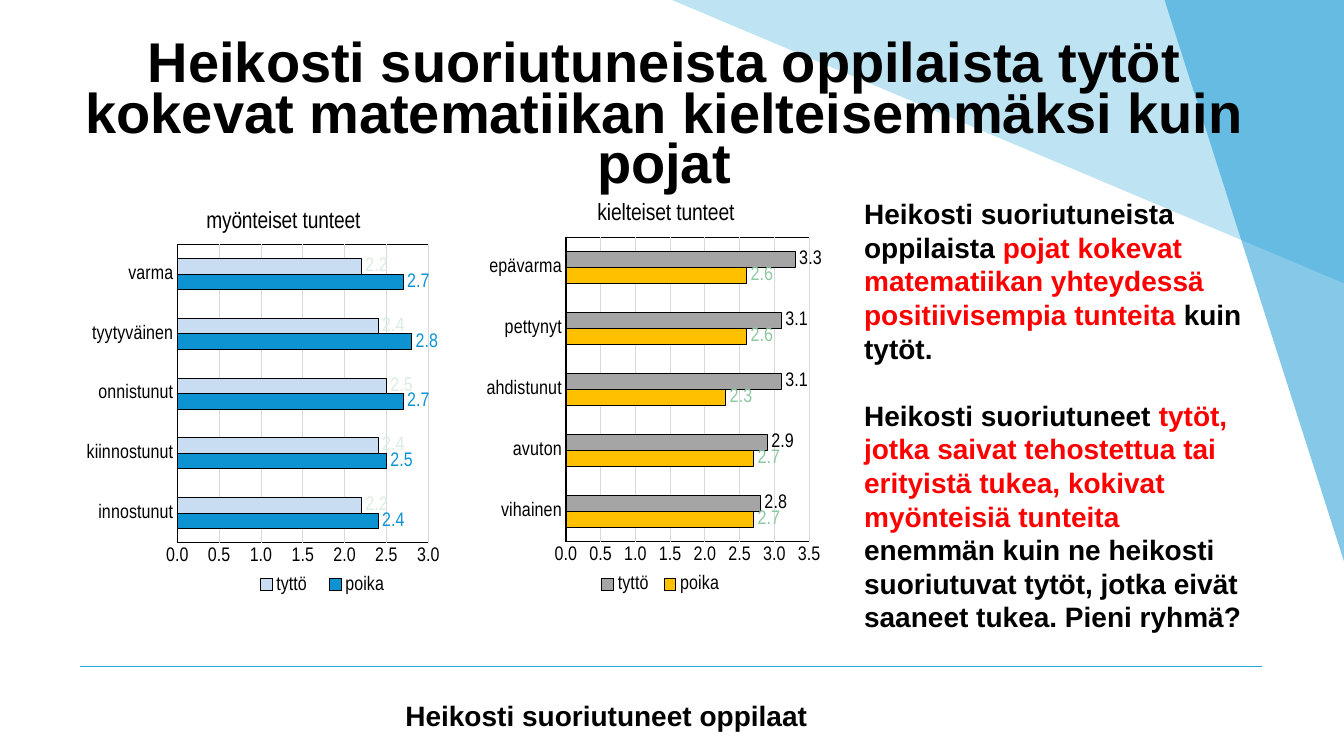
from lxml import etree
from pptx import Presentation
from pptx.chart.data import CategoryChartData
from pptx.dml.color import RGBColor
from pptx.enum.chart import XL_CHART_TYPE, XL_LABEL_POSITION, XL_LEGEND_POSITION, XL_TICK_MARK
from pptx.enum.shapes import MSO_CONNECTOR
from pptx.enum.text import MSO_ANCHOR, MSO_AUTO_SIZE, PP_ALIGN
from pptx.oxml import parse_xml
from pptx.oxml.ns import nsdecls, qn
from pptx.util import Inches, Pt

BAR = XL_CHART_TYPE.BAR_CLUSTERED
OUTSIDE = XL_LABEL_POSITION.OUTSIDE_END
BOTTOM = XL_LEGEND_POSITION.BOTTOM
NO_TICK = XL_TICK_MARK.NONE
STRAIGHT = MSO_CONNECTOR.STRAIGHT
TOP = MSO_ANCHOR.TOP
FIXED = MSO_AUTO_SIZE.NONE
CENTER = PP_ALIGN.CENTER

WIDTH, HEIGHT = 13.33, 7.5
BLACK, RED, BLUE, SKY = "000000", "FF0000", "0D93D2", "28A7DA"

TITLE = "Heikosti suoriutuneista oppilaista tytöt kokevat matematiikan kielteisemmäksi kuin pojat"
FINDINGS = [
    [("Heikosti suoriutuneista oppilaista ", BLACK),
     ("pojat kokevat matematiikan yhteydessä positiivisempia tunteita ", RED),
     ("kuin tytöt.", BLACK)],
    [("Heikosti suoriutuneet ", BLACK),
     ("tytöt, jotka saivat tehostettua tai erityistä tukea, kokivat myönteisiä tunteita ", RED),
     ("enemmän kuin ne heikosti suoriutuvat tytöt, jotka eivät saaneet tukea. Pieni ryhmä?", BLACK)],
]
POSITIVE = {
    "title": "myönteiset tunteet", "maximum": 3,
    "legend": (0.44, 0.44), "plot": (0.25, 0.71),
    "categories": ["innostunut", "kiinnostunut", "onnistunut", "tyytyväinen", "varma"],
    "series": [("poika", [2.4, 2.5, 2.7, 2.8, 2.7], BLUE, BLUE),
               ("tyttö", [2.2, 2.4, 2.5, 2.4, 2.2], "C8DDF1", "DBEEE1")],
}
NEGATIVE = {
    "title": "kielteiset tunteet", "maximum": 3.5,
    "legend": (0.32, 0.4), "plot": (0.24, 0.72),
    "categories": ["vihainen", "avuton", "ahdistunut", "pettynyt", "epävarma"],
    "series": [("poika", [2.7, 2.7, 2.3, 2.6, 2.6], "FFC000", "8DC9A0"),
               ("tyttö", [2.8, 2.9, 3.1, 3.1, 3.3], "A5A5A5", BLACK)],
}


def color(value):
    """Turn a hex string into a colour."""
    return RGBColor.from_string(value)


def style_font(font, size, name, value, bold=False):
    """Set size, typeface, colour and weight."""
    font.size, font.name, font.bold = Pt(size), name, bold
    font.color.rgb = color(value)


def style_line(line, value):
    """Give an outline a thin solid colour."""
    line.color.rgb = color(value)
    line.width = Pt(0.75)


def prepare_frame(frame):
    """Wrap text in a frame without margins."""
    frame.word_wrap = True
    frame.auto_size = FIXED
    frame.vertical_anchor = TOP
    frame.margin_left = frame.margin_right = frame.margin_top = frame.margin_bottom = 0


def add_spans(para, spans, size):
    """Add bold coloured runs to a paragraph."""
    for text, value in spans:
        span = para.add_run()
        span.text = text
        style_font(span.font, size, "Arial", value, True)


def add_facet(page, points, value, opacity):
    """Draw a translucent triangle."""
    builder = page.shapes.build_freeform(Inches(points[0][0]), Inches(points[0][1]), scale=1.0)
    builder.add_line_segments([(Inches(x), Inches(y)) for x, y in points[1:]], close=True)
    facet = builder.convert_to_shape()
    facet.shadow.inherit = False
    facet.fill.solid()
    facet.fill.fore_color.rgb = color(value)
    facet.line.fill.background()
    tint = facet.fill._xPr.find(".//" + qn("a:srgbClr"))
    etree.SubElement(tint, qn("a:alpha")).set("val", str(opacity * 1000))


def add_backdrop(page):
    """Draw the corner facets and the rule above the footer."""
    add_facet(page, [(WIDTH / 2, 0), (WIDTH, 2.81), (WIDTH, 0)], SKY, 30)
    add_facet(page, [(11.55, 0), (WIDTH, 5.57), (WIDTH, 0)], BLUE, 50)
    rule = page.shapes.add_connector(STRAIGHT, *map(Inches, (0.79, 6.61, 12.52, 6.61)))
    rule.line.color.rgb = color(SKY)
    rule.line.width = Pt(1)
    etree.SubElement(rule._element.spPr, qn("a:effectLst"))


def add_title(page, box):
    """Place the headline placeholder in front of the backdrop."""
    title = page.shapes.title
    page.shapes._spTree.append(title._element)
    title.left, title.top, title.width, title.height = map(Inches, box)
    prepare_frame(title.text_frame)
    para = title.text_frame.paragraphs[0]
    para.alignment = CENTER
    para.line_spacing = 0.75
    add_spans(para, [(TITLE, BLACK)], 40)


def add_text(page, box, paragraphs):
    """Place bold body paragraphs one line apart."""
    frame = page.shapes.add_textbox(*map(Inches, box)).text_frame
    prepare_frame(frame)
    for index, spans in enumerate(paragraphs):
        para = frame.add_paragraph() if index else frame.paragraphs[0]
        if index:
            para.space_before = Pt(24)
        add_spans(para, spans, 20)


def set_layout(element, shares, inner=False):
    """Fix a chart part at shares of the chart's size."""
    for old in element.findall(qn("c:layout")):
        element.remove(old)
    target = '<c:layoutTarget val="inner"/>' if inner else ""
    modes = "".join(f'<c:{axis}Mode val="edge"/>' for axis in "xy")
    places = "".join(f'<c:{key} val="{share}"/>' for key, share in zip("xywh", shares))
    layout = parse_xml(f'<c:layout {nsdecls("c")}><c:manualLayout>{target}{modes}{places}'
                       '</c:manualLayout></c:layout>')
    before = element.find(qn("c:tx"))
    if before is None:
        before = element.find(qn("c:legendPos"))
    if before is None:
        element.insert(0, layout)
    else:
        before.addnext(layout)


def style_axes(chart, maximum):
    """Format the category and value axes."""
    for axis in (chart.category_axis, chart.value_axis):
        axis.major_tick_mark = axis.minor_tick_mark = NO_TICK
        style_font(axis.tick_labels.font, 14, "Arial Narrow", BLACK)
    style_line(chart.category_axis.format.line, BLACK)
    scale = chart.value_axis
    scale.minimum_scale, scale.maximum_scale, scale.major_unit = 0, maximum, 0.5
    scale.tick_labels.number_format = "0.0"
    scale.tick_labels.number_format_is_linked = False
    scale.format.line.fill.background()
    style_line(scale.major_gridlines.format.line, "D9D9D9")


def add_feelings_chart(page, box, feelings):
    """Place a bar chart comparing girls and boys."""
    data = CategoryChartData(number_format="0.0")
    data.categories = feelings["categories"]
    for name, values, _, _ in feelings["series"]:
        data.add_series(name, values)
    chart = page.shapes.add_chart(BAR, *map(Inches, box), data).chart
    style_font(chart.font, 14, "Arial Narrow", BLACK)
    style_axes(chart, feelings["maximum"])
    plot = chart.plots[0]
    plot.gap_width, plot.overlap, plot.vary_by_categories = 182, 0, False
    for series, (_, _, fill, label) in zip(plot.series, feelings["series"]):
        series.format.fill.solid()
        series.format.fill.fore_color.rgb = color(fill)
        style_line(series.format.line, BLACK)
        labels = series.data_labels
        labels.show_value, labels.position = True, OUTSIDE
        labels.number_format, labels.number_format_is_linked = "0.0", False
        style_font(labels.font, 14, "Arial Narrow", label)
    span = chart.chart_title.text_frame.paragraphs[0].add_run()
    span.text = feelings["title"]
    style_font(span.font, 16.8, "Arial Narrow", BLACK)
    chart.chart_title.include_in_layout = False
    set_layout(chart.chart_title._element, (0.32, 0))
    chart.has_legend = True
    chart.legend.position, chart.legend.include_in_layout = BOTTOM, False
    style_font(chart.legend.font, 14, "Arial Narrow", BLACK)
    left, width = feelings["legend"]
    set_layout(chart.legend._element, (left, 0.92, width, 0.07))
    area = chart._chartSpace.chart.plotArea
    left, width = feelings["plot"]
    set_layout(area, (left, 0.1, width, 0.75), True)
    area.append(parse_xml(f'<c:spPr {nsdecls("c", "a")}><a:noFill/><a:ln w="9525"><a:solidFill>'
                          f'<a:srgbClr val="{BLACK}"/></a:solidFill></a:ln></c:spPr>'))


def main():
    """Build the slide and save the deck."""
    deck = Presentation()
    deck.slide_width, deck.slide_height = Inches(WIDTH), Inches(HEIGHT)
    page = deck.slides.add_slide(deck.slide_layouts[5])
    add_backdrop(page)
    add_title(page, (0.72, 0.42, 11.73, 0.73))
    add_text(page, (8.57, 1.95, 3.81, 4.38), FINDINGS)
    add_text(page, (4.02, 6.93, 4.14, 0.34), [[("Heikosti suoriutuneet oppilaat", BLACK)]])
    add_feelings_chart(page, (0.86, 2.03, 3.53, 3.95), POSITIVE)
    add_feelings_chart(page, (4.81, 1.95, 3.35, 4.03), NEGATIVE)
    deck.save("out.pptx")


if __name__ == "__main__":
    main()
